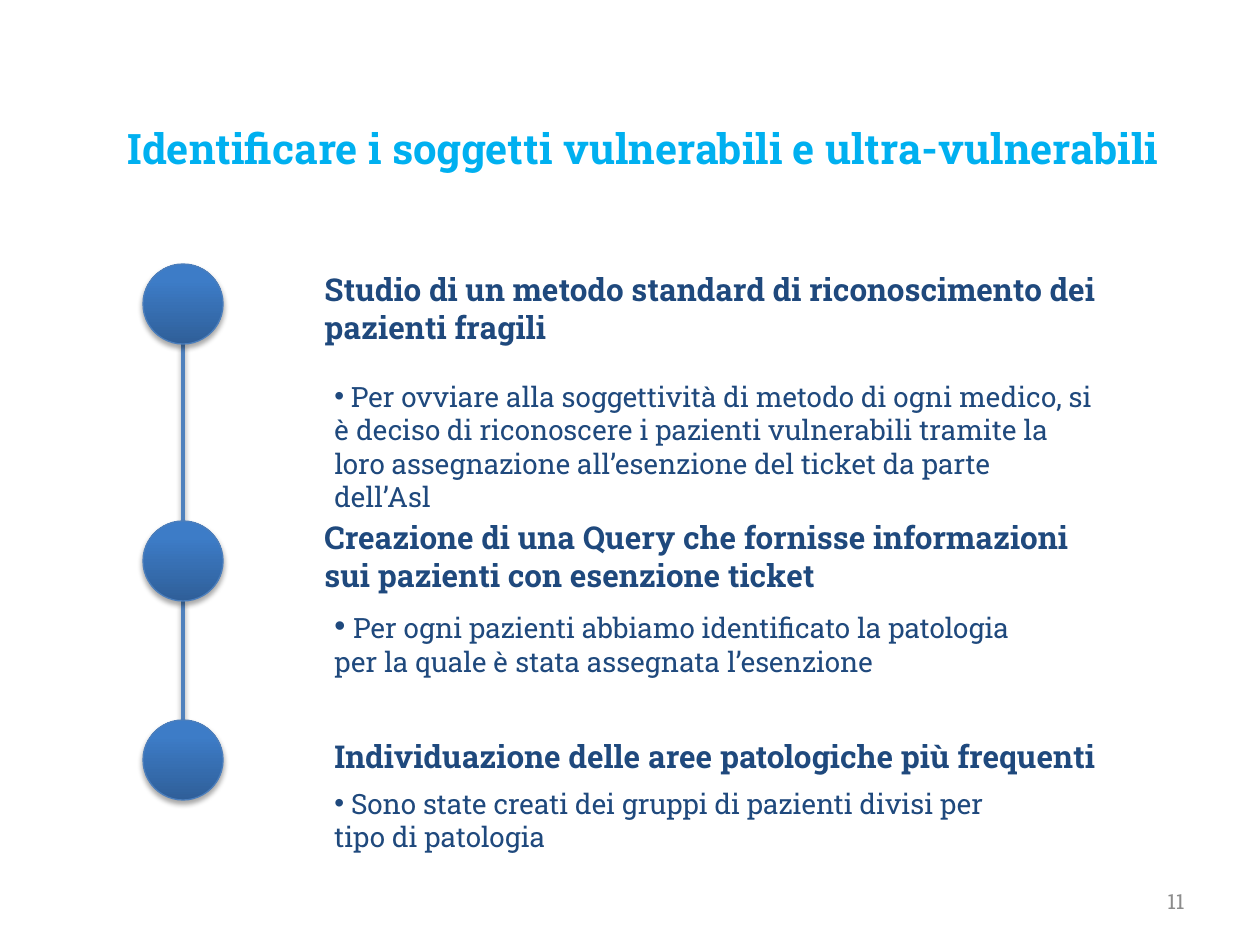
from pptx import Presentation, util as u
from pptx.dml.color import RGBColor
from pptx.enum import shapes, text
from pptx.oxml import parse_xml
from pptx.oxml.ns import nsdecls

PX = 914400 / 126
NAVY = "1F497D"


def add_run(p, words, size, color, bold=False):
    r = p.add_run()
    r.text = words
    r.font.name = "Roboto Slab"
    r.font.size = u.Pt(size)
    r.font.bold = bold
    r.font.color.rgb = RGBColor.from_string(color)


def add_shadow(sp, distance, alpha):
    sp._element.spPr.append(parse_xml(
        f'<a:effectLst {nsdecls("a")}><a:outerShdw blurRad="{u.Pt(3.1)}" '
        f'dist="{u.Pt(distance)}" dir="5400000" rotWithShape="0">'
        f'<a:srgbClr val="000000"><a:alpha val="{alpha * 1000}"/></a:srgbClr>'
        '</a:outerShdw></a:effectLst>'))


prs = Presentation()
prs.slide_width, prs.slide_height = u.Inches(10), u.Inches(7.5)
s = prs.slides.add_slide(prs.slide_layouts[5])

title = s.shapes.title
title.left, title.top, title.width, title.height = [
    round(v * PX) for v in (115, 116, 1081, 115)]
tf = title.text_frame
tf.word_wrap = True
tf.auto_size = text.MSO_AUTO_SIZE.NONE
tf.vertical_anchor = text.MSO_ANCHOR.TOP
p = tf.paragraphs[0]
p.alignment = text.PP_ALIGN.LEFT
add_run(p, "Identificare i soggetti vulnerabili e ultra-vulnerabili", 24, "00B0F0", True)

tops = [264, 521, 720]
left, size = 143, 80
middle = left + size // 2

for upper, lower in zip(tops, tops[1:]):
    line = s.shapes.add_connector(
        shapes.MSO_CONNECTOR.STRAIGHT,
        *[round(v * PX) for v in (middle, upper + size, middle, lower)])
    line.line.color.rgb = RGBColor.from_string("4F81BD")
    line.line.width = u.Pt(2)
    add_shadow(line, 1.6, 38)

for top in tops:
    sp = s.shapes.add_shape(
        shapes.MSO_SHAPE.OVAL, *[round(v * PX) for v in (left, top, size, size)])
    sp.fill.gradient()
    sp.fill.gradient_angle = 90
    for stop, position, color in zip(sp.fill.gradient_stops, (0, 0.8), ("2F5F99", "3D7CC7")):
        stop.position = position
        stop.color.rgb = RGBColor.from_string(color)
    sp.line.color.rgb = RGBColor.from_string("4B7EBC")
    sp.line.width = u.Pt(0.75)
    add_shadow(sp, 1.8, 35)

headings = [
    (312, 264, 804, 89, "Studio di un metodo standard di riconoscimento dei pazienti fragili"),
    (312, 512, 784, 89, "Creazione di una Query che fornisse informazioni sui pazienti con esenzione ticket"),
    (322, 731, 804, 50, "Individuazione delle aree patologiche più frequenti"),
]
for *box, words in headings:
    sp = s.shapes.add_textbox(*[round(v * PX) for v in box])
    sp.text_frame.word_wrap = True
    add_run(sp.text_frame.paragraphs[0], words, 18, NAVY, True)

details = [
    (322, 373, 784, 115, [
        (" Per ovviare alla soggettività di metodo di ogni medico, si è deciso di riconoscere "
         "i pazienti vulnerabili tramite la loro assegnazione all’esenzione del ticket da parte "
         "dell’Asl", 16)]),
    (322, 601, 745, 84, [
        (" ", 18),
        ("Per ogni pazienti abbiamo identificato la patologia per la quale è stata assegnata "
         "l’esenzione", 16)]),
    (322, 780, 684, 81, [
        (" Sono state creati dei gruppi di pazienti divisi per tipo di patologia", 16)]),
]
for *box, runs in details:
    sp = s.shapes.add_textbox(*[round(v * PX) for v in box])
    sp.text_frame.word_wrap = True
    p = sp.text_frame.paragraphs[0]
    pPr = p._p.get_or_add_pPr()
    pPr.append(parse_xml(f'<a:buFont {nsdecls("a")} typeface="Arial"/>'))
    pPr.append(parse_xml(f'<a:buChar {nsdecls("a")} char="•"/>'))
    for words, points in runs:
        add_run(p, words, points, NAVY)

sp = s.shapes.add_textbox(*[round(v * PX) for v in (903, 876, 294, 50)])
tf = sp.text_frame
tf.word_wrap = True
tf.vertical_anchor = text.MSO_ANCHOR.MIDDLE
p = tf.paragraphs[0]
p.alignment = text.PP_ALIGN.RIGHT
add_run(p, "11", 12, "8C8C8C")

prs.save("out.pptx")
